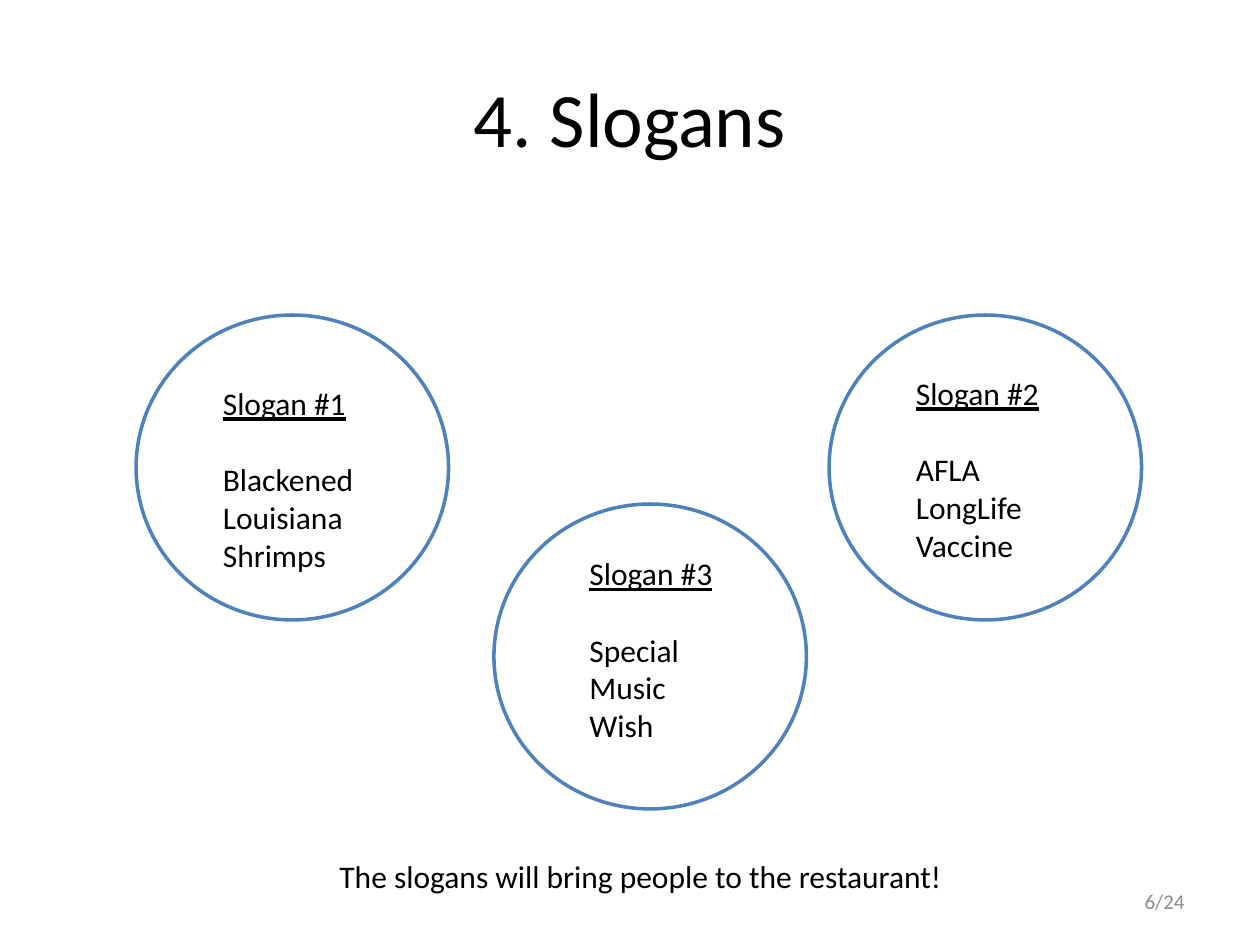
from pptx import Presentation
from pptx.dml.color import RGBColor
from pptx.enum.shapes import MSO_SHAPE
from pptx.enum.text import MSO_ANCHOR, PP_ALIGN
from pptx.util import Inches, Pt

# Content: circle corner, text corner, heading, lines
SLOGANS = [
    ((1.08, 2.5), (1.67, 3), "Slogan #1", ["Blackened Louisiana", "Shrimps"]),
    ((6.58, 2.5), (7.17, 2.92), "Slogan #2", ["AFLA", "LongLife", "Vaccine"]),
    ((3.92, 4), (4.58, 4.35), "Slogan #3", ["Special", "Music", "Wish"]),
]
TITLE = "4. Slogans"
CLOSING = "The slogans will bring people to the restaurant!"
PAGE = "6/24"

# Formats
COLORS = {"text": "000000", "ring": "4F81BD", "page": "8C8C8C"}
CIRCLE = (2.48, 2.42)
LABEL = (2.08, 1.62)
GAP = Pt(22)  # one line of 18 pt text
BODY = {"size": Pt(18), "name": "Calibri"}
HEAD = {**BODY, "underline": True}
BIG = {**BODY, "size": Pt(44)}
SMALL = {**BODY, "size": Pt(12)}


def color(key):
    return RGBColor.from_string(COLORS[key])


def style(para, fmt, align=PP_ALIGN.LEFT, ink="text"):
    para.alignment = align
    for key, value in fmt.items():
        setattr(para.font, key, value)
    para.font.color.rgb = color(ink)


def add_text(slide, box, lines, fmt=BODY, align=PP_ALIGN.LEFT, ink="text"):
    frame = slide.shapes.add_textbox(*map(Inches, box)).text_frame
    frame.word_wrap = True
    frame.text = "\n".join(lines)
    for para in frame.paragraphs:
        style(para, fmt, align, ink)
    return frame


def add_ring(slide, box):
    ring = slide.shapes.add_shape(MSO_SHAPE.OVAL, *map(Inches, box))
    ring.shadow.inherit = False
    ring.fill.background()
    ring.line.color.rgb = color("ring")
    ring.line.width = Pt(2)


def main():
    deck = Presentation()
    deck.slide_width, deck.slide_height = Inches(10), Inches(7.5)
    slide = deck.slides.add_slide(deck.slide_layouts[5])

    # Title
    title = slide.shapes.title
    title.left, title.top, title.width, title.height = map(
        Inches, (0.5, 0.3, 9, 1.25))
    title.text_frame.text = TITLE
    title.text_frame.vertical_anchor = MSO_ANCHOR.MIDDLE
    style(title.text_frame.paragraphs[0], BIG, PP_ALIGN.CENTER)

    # Slogans in circles
    for ring, label, head, lines in SLOGANS:
        add_ring(slide, ring + CIRCLE)
        frame = add_text(slide, label + LABEL, [head, *lines])
        first = frame.paragraphs[0]
        style(first, HEAD)
        first.space_after = GAP

    # Closing line and page number
    add_text(slide, (0.75, 6.75, 8.67, 0.4), [CLOSING], align=PP_ALIGN.CENTER)
    page = add_text(slide, (7.17, 6.95, 2.33, 0.4), [PAGE], SMALL,
                    PP_ALIGN.RIGHT, "page")
    page.vertical_anchor = MSO_ANCHOR.MIDDLE

    deck.save("out.pptx")


if __name__ == "__main__":
    main()
